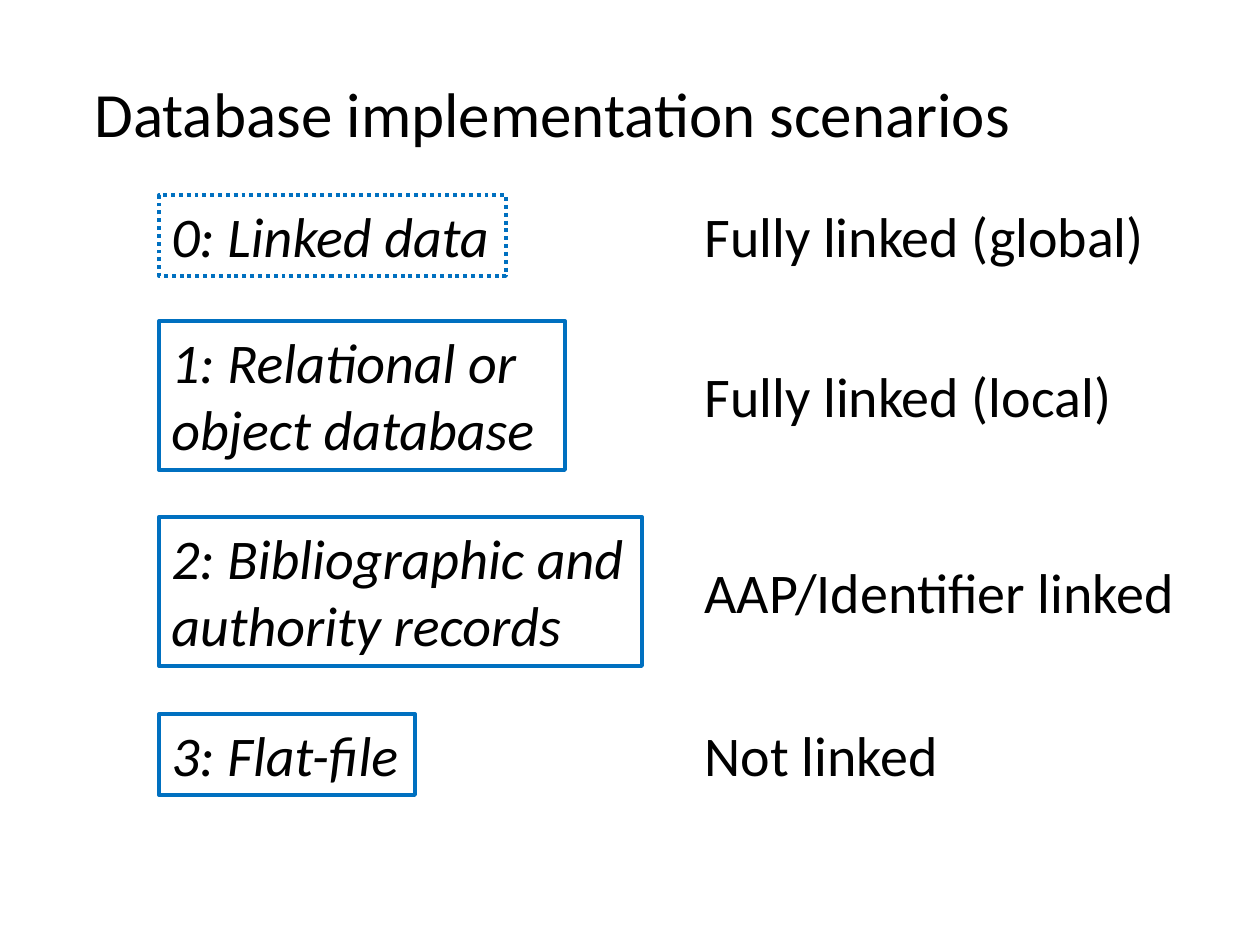
from pptx import Presentation
from pptx.dml.color import RGBColor
from pptx.enum.dml import MSO_LINE
from pptx.enum.shapes import MSO_SHAPE
from pptx.enum.text import MSO_ANCHOR, MSO_AUTO_SIZE, PP_ALIGN
from pptx.util import Emu, Pt

PX = 914400 // 126
COLORS = {"text": "000000", "outline": "0070C0"}
FONT = "Calibri"
SCENARIO_LEFT, LINKING_LEFT = 159, 692
ONE_LINE, TWO_LINES = 81, 149

# Scenario lines, top, box width, outline dash, linking, linking width
SCENARIOS = [
    (["0: Linked data"], 195, 347, MSO_LINE.ROUND_DOT,
     "Fully linked (global)", 470),
    (["1: Relational or", "object database"], 321, 406, MSO_LINE.SOLID,
     "Fully linked (local)", 437),
    (["2: Bibliographic and", "authority records"], 517, 483, MSO_LINE.SOLID,
     "AAP/Identifier linked", 500),
    (["3: Flat-file"], 714, 256, MSO_LINE.SOLID,
     "Not linked", 261),
]


def px(*lengths):
    return [Emu(length * PX) for length in lengths]


def color(name):
    return RGBColor.from_string(COLORS[name])


def write_lines(holder, lines, size, italic=False):
    frame = holder.text_frame
    frame.word_wrap = False
    frame.auto_size = MSO_AUTO_SIZE.SHAPE_TO_FIT_TEXT
    frame.vertical_anchor = MSO_ANCHOR.TOP
    for index, line in enumerate(lines):
        paragraph = frame.add_paragraph() if index else frame.paragraphs[0]
        paragraph.alignment = PP_ALIGN.LEFT
        run = paragraph.add_run()
        run.text = line
        run.font.name = FONT
        run.font.size = Pt(size)
        run.font.italic = italic
        run.font.color.rgb = color("text")


def add_label(slide, text, left, top, width, height, size):
    label = slide.shapes.add_textbox(*px(left, top, width, height))
    write_lines(label, [text], size)


def add_scenario_box(slide, lines, top, width, height, dash):
    scenario = slide.shapes.add_shape(
        MSO_SHAPE.RECTANGLE, *px(SCENARIO_LEFT, top, width, height))
    scenario.shadow.inherit = False
    scenario.fill.background()
    scenario.line.color.rgb = color("outline")
    scenario.line.width = Pt(2.25)
    scenario.line.dash_style = dash
    write_lines(scenario, lines, 32, italic=True)


def main():
    deck = Presentation()
    deck.slide_width, deck.slide_height = px(1260, 945)
    slide = deck.slides.add_slide(deck.slide_layouts[6])

    # Title
    add_label(slide, "Database implementation scenarios", 82, 68, 950, 89, 36)

    # Each scenario, with its kind of linking centred beside it
    for lines, top, width, dash, linking, linking_width in SCENARIOS:
        height = ONE_LINE if len(lines) == 1 else TWO_LINES
        add_scenario_box(slide, lines, top, width, height, dash)
        add_label(slide, linking, LINKING_LEFT, top + (height - ONE_LINE) // 2,
                  linking_width, ONE_LINE, 32)

    deck.save("out.pptx")


if __name__ == "__main__":
    main()
